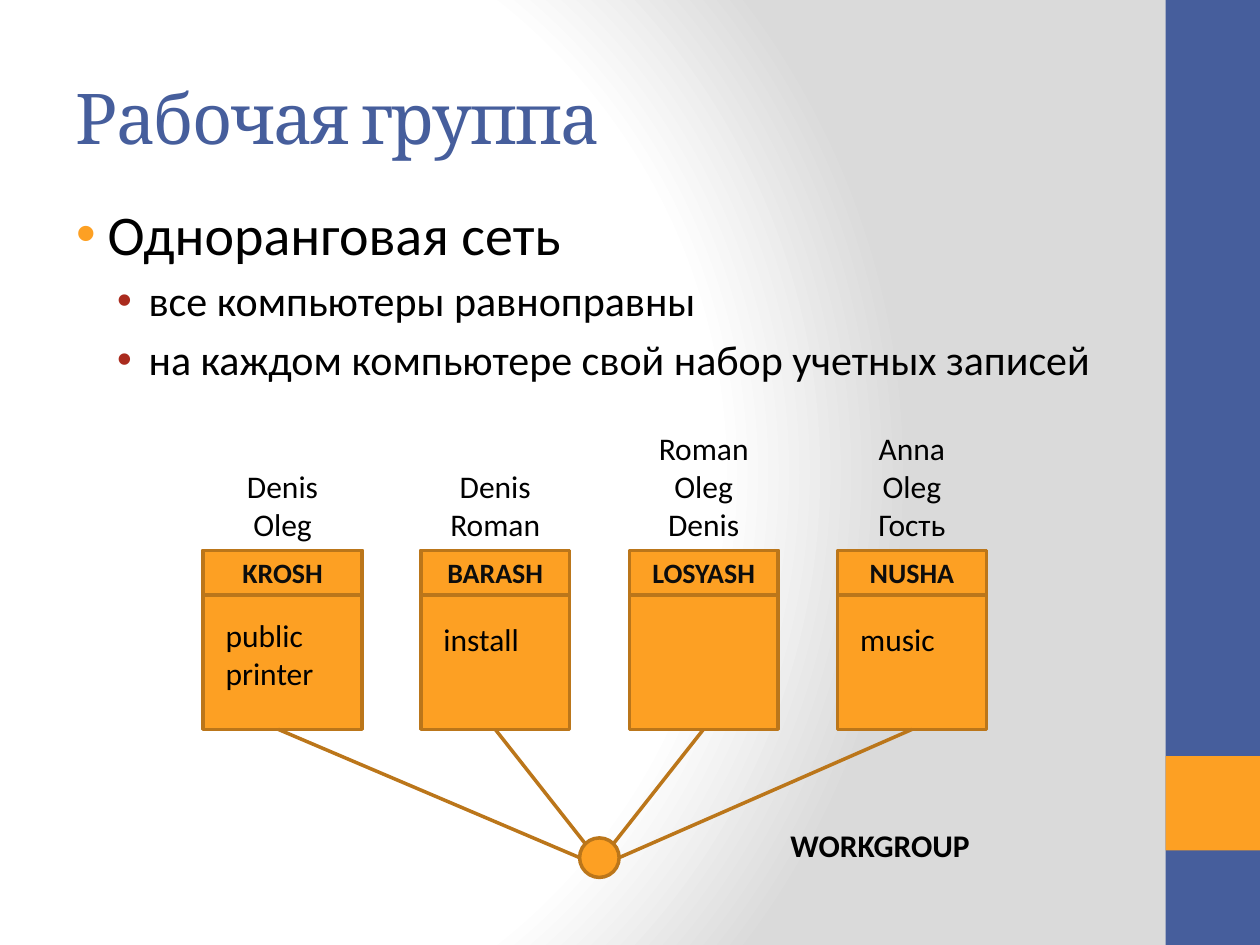
"""Builds a slide describing a peer-to-peer workgroup of four computers."""
from dataclasses import dataclass

from lxml.etree import SubElement
from pptx import Presentation
from pptx.dml.color import RGBColor
from pptx.enum.shapes import MSO_CONNECTOR, MSO_SHAPE
from pptx.enum.text import MSO_ANCHOR, PP_ALIGN
from pptx.oxml import parse_xml
from pptx.oxml.ns import nsdecls, qn
from pptx.shapes.autoshape import Shape
from pptx.slide import Slide
from pptx.util import Pt

BLUE = RGBColor(0x46, 0x5E, 0x9C)
ORANGE = RGBColor(0xFD, 0xA0, 0x23)
BROWN = RGBColor(0xBB, 0x76, 0x1A)
RED = RGBColor(0xAA, 0x2B, 0x1E)
BLACK = RGBColor(0, 0, 0)
DARK = RGBColor(0x0D, 0x0D, 0x0D)

BOX_TOP, BOX_HEIGHT, HEADER_HEIGHT = 314.6, 102.2, 25.4
USER_LINE, USER_PADDING = 21.8, 7.4
HUB_LEFT, HUB_TOP, HUB_SIZE = 331.2, 478.8, 22.6

BACKGROUND = f"""<p:bg {nsdecls("p", "a")}><p:bgPr><a:gradFill rotWithShape="1"><a:gsLst>
<a:gs pos="0"><a:srgbClr val="FFFFFF"/></a:gs>
<a:gs pos="75000"><a:srgbClr val="FFFFFF"/></a:gs>
<a:gs pos="100000"><a:srgbClr val="DADADA"/></a:gs></a:gsLst>
<a:path path="circle"><a:fillToRect l="20000" t="50000" r="100000" b="50000"/></a:path>
</a:gradFill><a:effectLst/></p:bgPr></p:bg>"""


@dataclass(frozen=True)
class Computer:
    name: str
    left: float
    width: float
    users: list[str]
    shares: list[str]
    shares_top: float
    cable_start: float
    cable_end: tuple[float, float]


@dataclass(frozen=True)
class Bullet:
    text: str
    level: int
    size: float
    indent: float
    color: RGBColor


COMPUTERS = [
    Computer("KROSH", 116, 91, ["Denis", "Oleg"], ["public", "printer"], 348.5, 159, (331.2, 490.1)),
    Computer("BARASH", 240.5, 85, ["Denis", "Roman"], ["install"], 350.6, 283, (334.5, 482.2)),
    Computer("LOSYASH", 359.6, 85, ["Roman", "Oleg", "Denis"], [], 350.6, 402, (350.5, 482.2)),
    Computer("NUSHA", 478.6, 85, ["Anna", "Oleg", "Гость"], ["music"], 350.6, 521.2, (353.8, 490.1)),
]
BULLETS = [
    Bullet("Одноранговая сеть", 0, 32, 27, ORANGE),
    Bullet("все компьютеры равноправны", 1, 24, 50.4, RED),
    Bullet("на каждом компьютере свой набор учетных записей", 1, 24, 50.4, RED),
]


def add_run(p, text: str, size: float, color: RGBColor, bold: bool = False, font: str = "Calibri"):
    r = p.add_run()
    r.text = text
    r.font.name = font
    r.font.size = Pt(size)
    r.font.bold = bold
    r.font.color.rgb = color
    return r


def add_block(s: Slide, kind: MSO_SHAPE, left: float, top: float, width: float, height: float,
              fill: RGBColor, line: RGBColor | None = None) -> Shape:
    sp = s.shapes.add_shape(kind, Pt(left), Pt(top), Pt(width), Pt(height))
    sp.shadow.inherit = False
    sp.fill.solid()
    sp.fill.fore_color.rgb = fill
    if line is None:
        sp.line.fill.background()
    else:
        sp.line.color.rgb = line
        sp.line.width = Pt(2)
    return sp


def add_text(s: Slide, lines: list[str], left: float, top: float, width: float,
             align: PP_ALIGN = PP_ALIGN.CENTER, bold: bool = False) -> None:
    height = USER_LINE * len(lines) + USER_PADDING
    tf = s.shapes.add_textbox(Pt(left), Pt(top), Pt(width), Pt(height)).text_frame
    tf.word_wrap = True
    for i, line in enumerate(lines):
        p = tf.add_paragraph() if i else tf.paragraphs[0]
        p.alignment = align
        add_run(p, line, 18, BLACK, bold)


def add_cable(s: Slide, start: tuple[float, float], end: tuple[float, float]) -> None:
    cable = s.shapes.add_connector(MSO_CONNECTOR.STRAIGHT, *map(Pt, start + end))
    cable.line.color.rgb = BROWN
    cable.line.width = Pt(2)
    SubElement(cable._element.spPr, qn("a:effectLst"))


def add_computer(s: Slide, pc: Computer) -> None:
    add_block(s, MSO_SHAPE.RECTANGLE, pc.left, BOX_TOP, pc.width, BOX_HEIGHT, ORANGE, BROWN)
    header = add_block(s, MSO_SHAPE.RECTANGLE, pc.left, BOX_TOP, pc.width, HEADER_HEIGHT, ORANGE, BROWN)
    tf = header.text_frame
    tf.word_wrap = True
    tf.vertical_anchor = MSO_ANCHOR.MIDDLE
    p = tf.paragraphs[0]
    p.alignment = PP_ALIGN.CENTER
    add_run(p, pc.name, 16, DARK, True)
    users_top = BOX_TOP - USER_LINE * len(pc.users) - USER_PADDING
    add_text(s, pc.users, pc.left, users_top, pc.width)
    if pc.shares:
        add_text(s, pc.shares, pc.left + 5.8, pc.shares_top, 73.4, PP_ALIGN.LEFT)


def add_bullets(s: Slide, bullets: list[Bullet]) -> None:
    tf = s.shapes.add_textbox(Pt(27.4), Pt(110.2), Pt(630), Pt(387.4)).text_frame
    tf.word_wrap = True
    for i, bullet in enumerate(bullets):
        p = tf.add_paragraph() if i else tf.paragraphs[0]
        p.level = bullet.level
        p.space_before = Pt(bullet.size * 0.2)
        add_run(p, bullet.text, bullet.size, BLACK)
        pPr = p._p.get_or_add_pPr()
        pPr.set("marL", str(Pt(bullet.indent)))
        pPr.set("indent", str(Pt(-18)))
        color = SubElement(pPr, qn("a:buClr"))
        SubElement(color, qn("a:srgbClr"), val=str(bullet.color))
        SubElement(pPr, qn("a:buFont"), typeface="Arial")
        SubElement(pPr, qn("a:buChar"), char="•")


def set_title(s: Slide, text: str) -> None:
    title = s.shapes.title
    title.left, title.top, title.width, title.height = Pt(36), Pt(21.6), Pt(600), Pt(90)
    tf = title.text_frame
    tf.vertical_anchor = MSO_ANCHOR.MIDDLE
    p = tf.paragraphs[0]
    p.alignment = PP_ALIGN.LEFT
    r = add_run(p, text, 40, BLUE, font="Cambria")
    r._r.get_or_add_rPr().set("spc", "-100")


def main() -> None:
    prs = Presentation()
    prs.slide_width, prs.slide_height = Pt(720), Pt(540)
    s = prs.slides.add_slide(prs.slide_layouts[5])
    s._element.cSld.insert(0, parse_xml(BACKGROUND))
    add_block(s, MSO_SHAPE.RECTANGLE, 666, 0, 54, 540, BLUE)
    add_block(s, MSO_SHAPE.RECTANGLE, 666, 432, 54, 54, ORANGE)
    set_title(s, "Рабочая группа")
    add_bullets(s, BULLETS)
    for pc in COMPUTERS:
        add_computer(s, pc)
    add_block(s, MSO_SHAPE.OVAL, HUB_LEFT, HUB_TOP, HUB_SIZE, HUB_SIZE, ORANGE, BROWN)
    for pc in COMPUTERS:
        add_cable(s, (pc.cable_start, BOX_TOP + BOX_HEIGHT), pc.cable_end)
    add_text(s, ["WORKGROUP"], 442.8, 468.7, 120.2, bold=True)
    prs.save("out.pptx")


if __name__ == "__main__":
    main()
